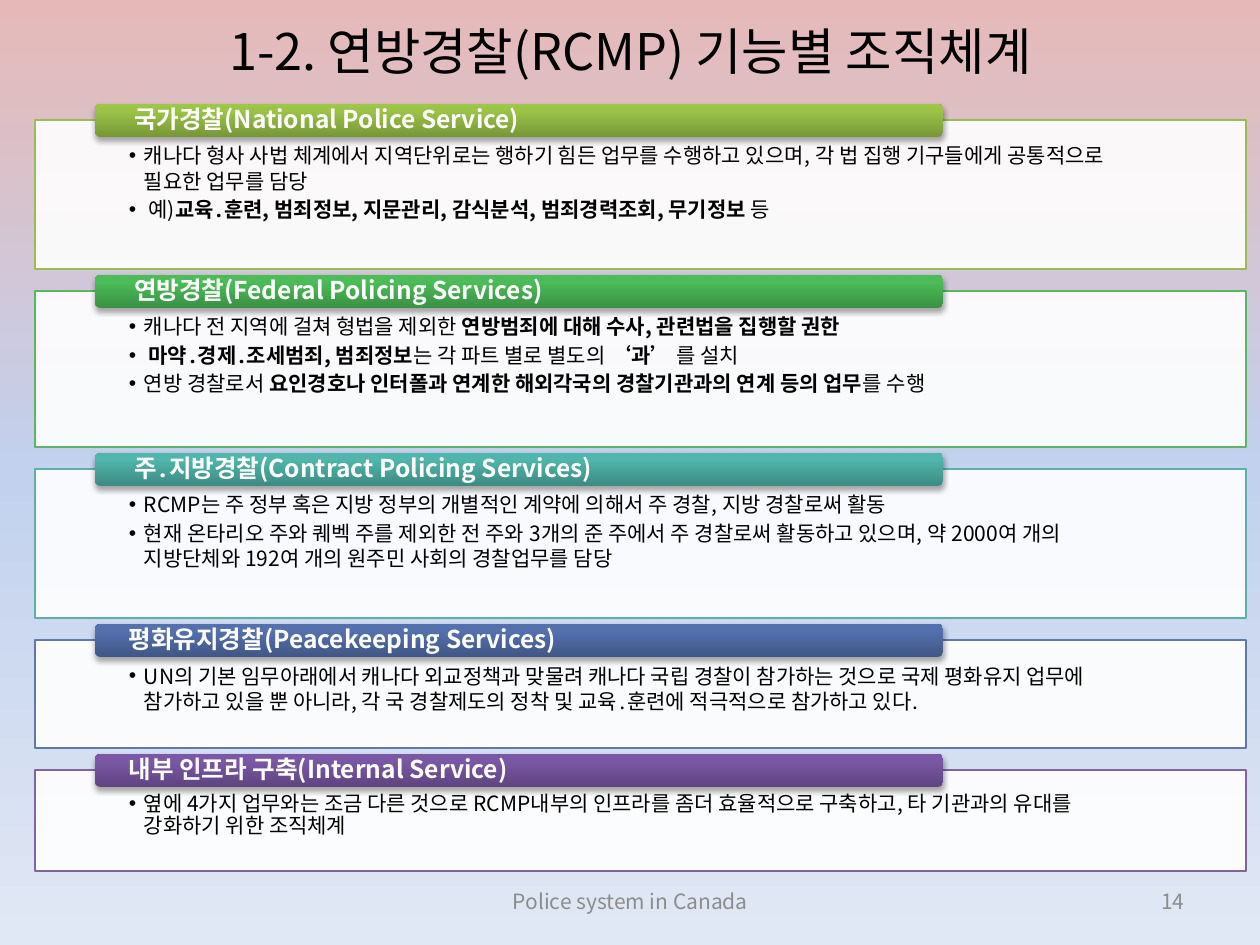
from dataclasses import dataclass

from lxml import etree
from pptx import Presentation
from pptx import util as u
from pptx.dml.color import RGBColor
from pptx.enum import shapes, text
from pptx.oxml.ns import qn

PX = u.Inches(1) / 126
LEFT, MID, RIGHT = (text.PP_ALIGN.LEFT, text.PP_ALIGN.CENTER,
                    text.PP_ALIGN.RIGHT)
TOP, CENTRE = text.MSO_ANCHOR.TOP, text.MSO_ANCHOR.MIDDLE


@dataclass(frozen=True)
class Theme:
    face: str = "Noto Sans CJK KR"
    ink: str = "000000"
    white: str = "FFFFFF"
    grey: str = "8C8C8C"
    sky: tuple = ((0, "E6B9B8"), (50, "C2D1ED"), (100, "E1E8F5"))
    title: float = 28.8
    head: float = 14
    body: float = 12


T = Theme()

# Each section: height, outline, tab colours, heading, line spacing, bullets.
# Asterisks switch bold on and off.
SECTIONS = [
    (149, "9BBB59", ("779737", "9BC348", "9DC746"),
     " *국가경찰(National Police Service)", 1,
     ["캐나다 형사 사법 체계에서 지역단위로는 행하기 힘든 업무를 수행하고 있으며, "
      "각 법 집행 기구들에게 공통적으로 필요한 업무를 담당",
      " 예)*교육․훈련, 범죄정보, 지문관리, 감식분석, 범죄경력조회, 무기정보 *등"]),
    (156, "5CB565", ("3A9144", "4CBC58", "4ABF57"),
     " *연방경찰(Federal Policing Services)", 1,
     ["캐나다 전 지역에 걸쳐 형법을 제외한 *연방범죄에 대해 수사, 관련법을 집행할 권한",
      " *마약․경제․조세범죄, 범죄정보*는 각 파트 별로 별도의 *‘과’ *를 설치",
      "연방 경찰로서 *요인경호나 인터폴과 연계한 해외각국의 경찰기관과의 연계 등의 업무*를 수행"]),
    (149, "5EAFA6", ("3D8B83", "50B5AA", "4EB8AC"),
     " *주․지방경찰(Contract Policing Services)", 1,
     ["RCMP는 주 정부 혹은 지방 정부의 개별적인 계약에 의해서 주 경찰, 지방 경찰로써 활동",
      "현재 온타리오 주와 퀘벡 주를 제외한 전 주와 3개의 준 주에서 주 경찰로써 활동하고 있으며, "
      "약 2000여 개의 지방단체와 192여 개의 원주민 사회의 경찰업무를 담당"]),
    (108, "6179A8", ("405786", "5471AE", "5271B0"),
     "*평화유지경찰(Peacekeeping Services)", 1,
     ["UN의 기본 임무아래에서 캐나다 외교정책과 맞물려 캐나다 국립 경찰이 참가하는 것으로 "
      "국제 평화유지 업무에 참가하고 있을 뿐 아니라, 각 국 경찰제도의 정착 및 "
      "교육․훈련에 적극적으로 참가하고 있다."]),
    (101, "8064A2", ("5F4480", "7B58A6", "7C57A8"),
     "*내부 인프라 구축(Internal Service)", 0.9,
     ["옆에 4가지 업무와는 조금 다른 것으로 RCMP내부의 인프라를 좀더 효율적으로 구축하고, "
      "타 기관과의 유대를 강화하기 위한 조직체계"]),
]


def px(n):
    return u.Emu(round(n * PX))


def rgb(code):
    return RGBColor.from_string(code)


def put(obj, **vals):
    for key, val in vals.items():
        setattr(obj, key, val)


def node(host, tag, **attrs):
    return etree.SubElement(host, qn(tag), attrs)


def grade(fill, host, stops, angle):
    """Fill with any number of gradient stops."""
    fill.gradient()
    fill.gradient_angle = 360 - angle
    group = next(host.iter(qn("a:gsLst")))
    for old in list(group):
        group.remove(old)
    for pos, code in stops:
        stop = node(group, "a:gs", pos=str(pos * 1000))
        node(stop, "a:srgbClr", val=code)


def dot(para):
    """Turn a paragraph into a bullet with a hanging indent."""
    props = para._p.get_or_add_pPr()
    props.set("marL", str(px(15)))
    props.set("indent", str(-px(15)))
    node(props, "a:buFont", typeface="Arial")
    node(props, "a:buChar", char="•")


def write(shape, lines, size, color, align=LEFT, anchor=CENTRE,
          pads=None, bullet=False, **form):
    """Write lines of text, with bold between asterisks."""
    frame = shape.text_frame
    put(frame, word_wrap=True, vertical_anchor=anchor)
    if pads:
        sides = ("left", "top", "right", "bottom")
        put(frame, **{f"margin_{s}": px(n) for s, n in zip(sides, pads)})
    for i, line in enumerate(lines):
        para = frame.add_paragraph() if i else frame.paragraphs[0]
        put(para, alignment=align, **form)
        if bullet:
            dot(para)
        for j, part in enumerate(line.split("*")):
            if part:
                run = para.add_run()
                run.text = part
                put(run.font, size=u.Pt(size), bold=j % 2 == 1, name=T.face)
                run.font.color.rgb = rgb(color)
                node(run._r.get_or_add_rPr(), "a:ea", typeface=T.face)


def block(slide, kind, box):
    shape = slide.shapes.add_shape(kind, *map(px, box))
    shape.shadow.inherit = False
    return shape


def panel(slide, box, edge, lines, pitch):
    shape = block(slide, shapes.MSO_SHAPE.RECTANGLE, box)
    shape.fill.solid()
    shape.fill.fore_color.rgb = rgb(T.white)
    tint = next(shape.element.spPr.iter(qn("a:srgbClr")))
    node(tint, "a:alpha", val="90000")
    shape.line.color.rgb = rgb(edge)
    shape.line.width = u.Pt(0.75)
    write(shape, lines, T.body, T.ink, anchor=TOP, pads=(94, 23, 94, 11),
          bullet=True, space_after=u.Pt(1.8), line_spacing=pitch)


def tab(slide, box, hues, label):
    shape = block(slide, shapes.MSO_SHAPE.ROUNDED_RECTANGLE, box)
    grade(shape.fill, shape.element, zip((0, 80, 100), hues), 270)
    shape.line.fill.background()
    glow = node(shape.element.spPr.find(qn("a:effectLst")), "a:outerShdw",
                blurRad=str(u.Pt(3.1)), dist=str(u.Pt(1.8)),
                dir="5400000", rotWithShape="0")
    node(node(glow, "a:srgbClr", val=T.ink), "a:alpha", val="35000")
    write(shape, [label], T.head, T.white, pads=(32, 0, 32, 0),
          line_spacing=0.9)


def note(slide, box, line, align):
    shape = slide.shapes.add_textbox(*map(px, box))
    write(shape, [line], T.body, T.grey, align)


def main():
    deck = Presentation()
    put(deck, slide_width=px(1260), slide_height=px(945))
    slide = deck.slides.add_slide(deck.slide_layouts[5])
    grade(slide.background.fill, slide.element, T.sky, 90)

    # Title
    head = slide.shapes.title
    put(head, left=px(144), top=px(0), width=px(984), height=px(100))
    write(head, ["1-2. 연방경찰(RCMP) 기능별 조직체계 "], T.title, T.ink, MID)

    # Stacked sections, each with a tab across its top edge
    top, gap = 120, 22
    for high, edge, hues, label, pitch, lines in SECTIONS:
        panel(slide, (35, top, 1211, high), edge, lines, pitch)
        tab(slide, (95, top - 16, 848, 33), hues, label)
        top += high + gap

    # Footer
    note(slide, (431, 876, 399, 50), "Police system in Canada", MID)
    note(slide, (903, 876, 294, 50), "14", RIGHT)
    deck.save("out.pptx")


if __name__ == "__main__":
    main()
